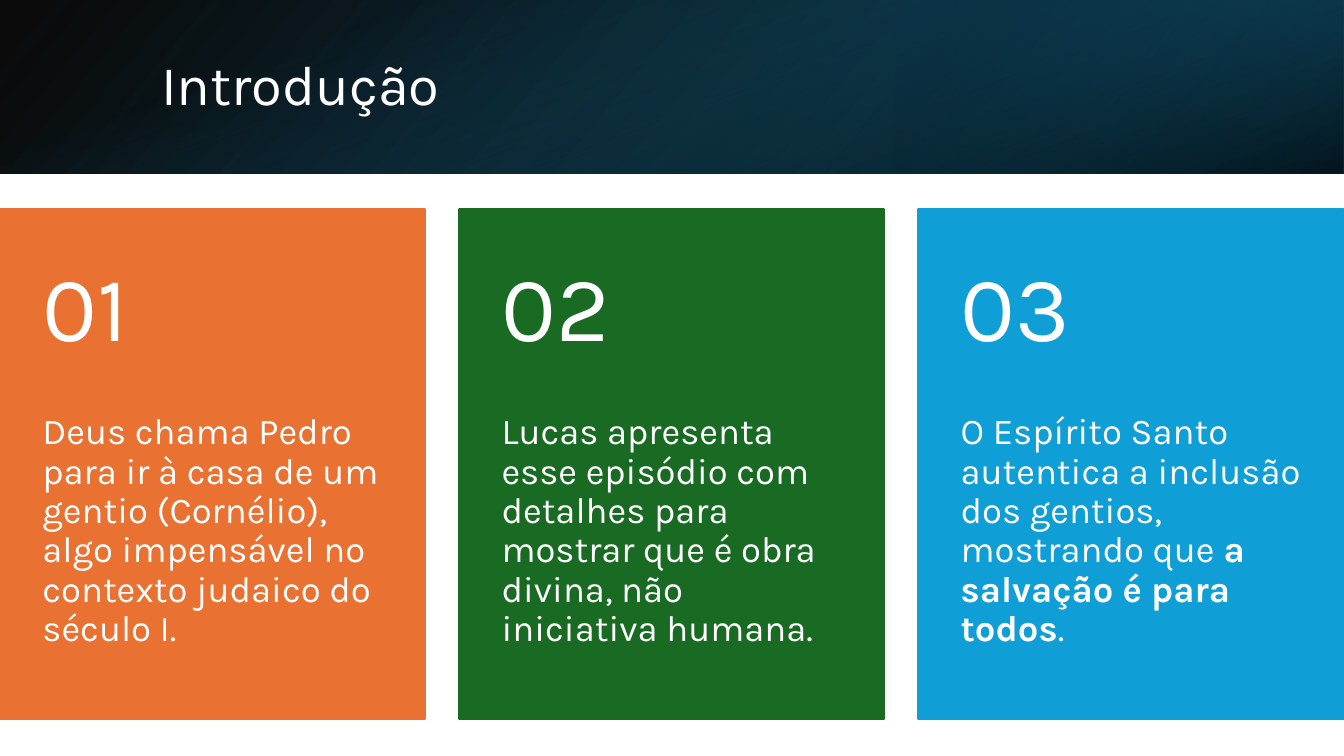
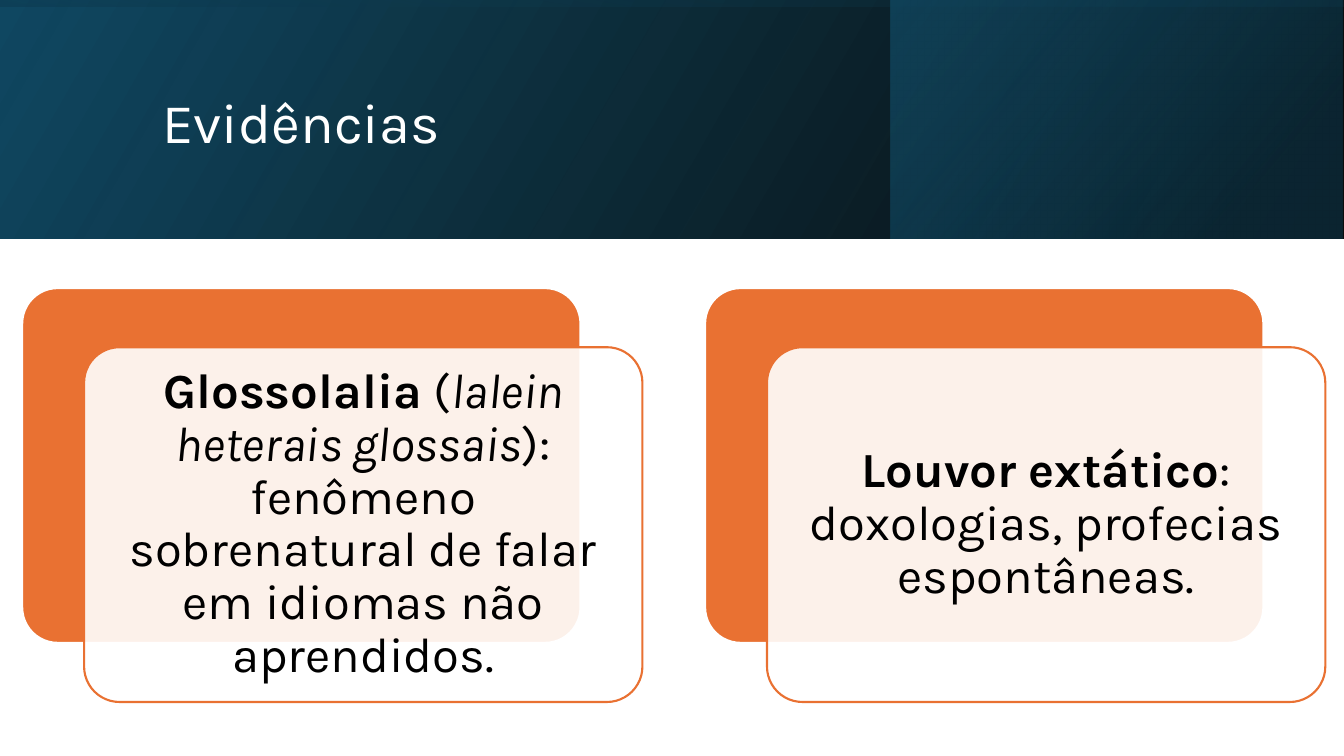
"""Builds two slides on the gentiles in Acts: an introduction and the evidence."""
from lxml.etree import SubElement
from pptx import Presentation
from pptx.dml.color import RGBColor
from pptx.enum.shapes import MSO_SHAPE
from pptx.enum.text import MSO_ANCHOR, PP_ALIGN
from pptx.oxml.ns import qn
from pptx.util import Cm, Pt

FONT = "Karla"
COLOURS = {
    "white": "FFFFFF",
    "black": "000000",
    "orange": "E97132",
    "green": "196B24",
    "sky": "0F9ED5",
    "teal": "156082",
    "petrol": "104862",
    "deep": "0B3041",
}
SLIDE_WIDTH, SLIDE_HEIGHT = 33.87, 19.05
BASE_STOPS = [(0, "black", 96), (100, "petrol", 100)]

REASONS = [
    ("orange", [("Deus chama Pedro para ir à casa de um gentio (Cornélio), "
                 "algo impensável no contexto judaico do século I.", "")]),
    ("green", [("Lucas apresenta esse episódio com detalhes para mostrar que "
                "é obra divina, não iniciativa humana.", "")]),
    ("sky", [("O Espírito Santo autentica a inclusão dos gentios, mostrando que ", ""),
             ("a salvação é para todos", "b"), (".", "")]),
]
EVIDENCES = [
    [("Glossolalia", "b"), (" (", ""), ("lalein heterais glossais", "i"),
     ("): fenômeno sobrenatural de falar em idiomas não aprendidos.", "")],
    [("Louvor extático", "b"), (": doxologias, profecias espontâneas.", "")],
]


def rgb(name):
    return RGBColor.from_string(COLOURS[name])


def add_block(slide, preset, box):
    block = slide.shapes.add_shape(preset, *map(Cm, box))
    block.shadow.inherit = False
    return block


def fill_block(block, fill, line, opacity=100):
    block.fill.solid()
    block.fill.fore_color.rgb = rgb(fill)
    if opacity < 100:
        set_opacity(block.element.spPr.find(".//" + qn("a:srgbClr")), opacity)
    block.line.color.rgb = rgb(line)
    block.line.width = Pt(1.5)


def set_opacity(colour, percent):
    SubElement(colour, qn("a:alpha")).set("val", str(percent * 1000))


def add_sheen(slide, box, stops, angle, rotation=0, flipped=True):
    sheen = add_block(slide, MSO_SHAPE.RECTANGLE, box)
    sheen.line.fill.background()
    sheen.rotation = rotation
    if flipped:
        sheen.element.spPr.xfrm.set("flipH", "1")
    sheen.fill.gradient()
    sheen.fill.gradient_angle = 360 - angle
    for stop, (position, colour, _) in zip(sheen.fill.gradient_stops, stops):
        stop.position = position / 100
        stop.color.rgb = rgb(colour)
    tints = list(sheen.element.spPr.iter(qn("a:srgbClr")))
    for tint, (_, _, opacity) in zip(tints, stops):
        set_opacity(tint, opacity)


def write(frame, runs, size, colour, insets, anchor, align=PP_ALIGN.LEFT):
    frame.word_wrap = True
    frame.vertical_anchor = anchor
    (frame.margin_left, frame.margin_top,
     frame.margin_right, frame.margin_bottom) = map(Cm, insets)
    paragraph = frame.paragraphs[0]
    paragraph.alignment = align
    paragraph.line_spacing = 0.9
    for words, style in runs:
        run = paragraph.add_run()
        run.text = words
        run.font.name = FONT
        run.font.size = Pt(size)
        run.font.color.rgb = rgb(colour)
        run.font.bold = style == "b"
        run.font.italic = style == "i"


def add_text(slide, box, runs, size, insets, anchor):
    frame = slide.shapes.add_textbox(*map(Cm, box)).text_frame
    write(frame, runs, size, "white", insets, anchor)


def add_title(slide, box, title):
    add_text(slide, box, [(title, "")], 40, (0.25, 0.13, 0.25, 0.13), MSO_ANCHOR.MIDDLE)


def upright_band(height):
    return (SLIDE_WIDTH - height) / 2, (height - SLIDE_WIDTH) / 2, height, SLIDE_WIDTH


def add_reason_card(slide, left, number, colour, runs):
    top, width, height, number_height = 5.28, 10.72, 12.85, 5.14
    card = add_block(slide, MSO_SHAPE.RECTANGLE, (left, top, width, height))
    fill_block(card, colour, colour)
    add_text(slide, (left, top + number_height, width, height - number_height),
             runs, 26, (1.07, 0, 1.07, 0.91), MSO_ANCHOR.TOP)
    add_text(slide, (left, top, width, number_height), [(f"{number:02}", "")],
             66, (1.07, 0.46, 1.07, 0.46), MSO_ANCHOR.MIDDLE)


def add_evidence_card(slide, left, runs):
    top, width, height = 7.26, 14.07, 8.94
    back = add_block(slide, MSO_SHAPE.ROUNDED_RECTANGLE, (left, top, width, height))
    front = add_block(slide, MSO_SHAPE.ROUNDED_RECTANGLE,
                      (left + 1.56, top + 1.49, width, height))
    for panel in (back, front):
        panel.adjustments[0] = 0.1
    fill_block(back, "orange", "white")
    fill_block(front, "white", "orange", opacity=90)
    write(front.text_frame, runs, 35, "black", (0.38,) * 4,
          MSO_ANCHOR.MIDDLE, PP_ALIGN.CENTER)


def build_introduction(slide):
    band = 4.37
    add_sheen(slide, (0, 0, SLIDE_WIDTH, band), BASE_STOPS, 140)
    add_sheen(slide, (22.58, 0, 11.29, band),
              [(19, "deep", 68), (100, "teal", 79)], 320, rotation=180)
    add_sheen(slide, upright_band(band),
              [(23, "teal", 0), (99, "black", 74)], 340, rotation=90, flipped=False)
    add_title(slide, (3.81, 0.97, 27.89, 2.44), "Introdução")
    for index, (colour, runs) in enumerate(REASONS):
        add_reason_card(slide, index * 11.57, index + 1, colour, runs)


def build_evidence(slide):
    band = 6.02
    add_sheen(slide, (0, 0, SLIDE_WIDTH, band), BASE_STOPS, 330)
    add_sheen(slide, (22.45, 0, 11.38, band),
              [(19, "deep", 68), (100, "teal", 48)], 320)
    add_sheen(slide, upright_band(band),
              [(23, "petrol", 16), (99, "black", 45)], 350, rotation=270)
    add_title(slide, (3.84, 0.97, 27, 4.37), "Evidências")
    for index, runs in enumerate(EVIDENCES):
        add_evidence_card(slide, 0.56 + index * 17.21, runs)


def main():
    deck = Presentation()
    deck.slide_width, deck.slide_height = Cm(SLIDE_WIDTH), Cm(SLIDE_HEIGHT)
    for build in (build_introduction, build_evidence):
        build(deck.slides.add_slide(deck.slide_layouts[6]))
    deck.save("out.pptx")


if __name__ == "__main__":
    main()
